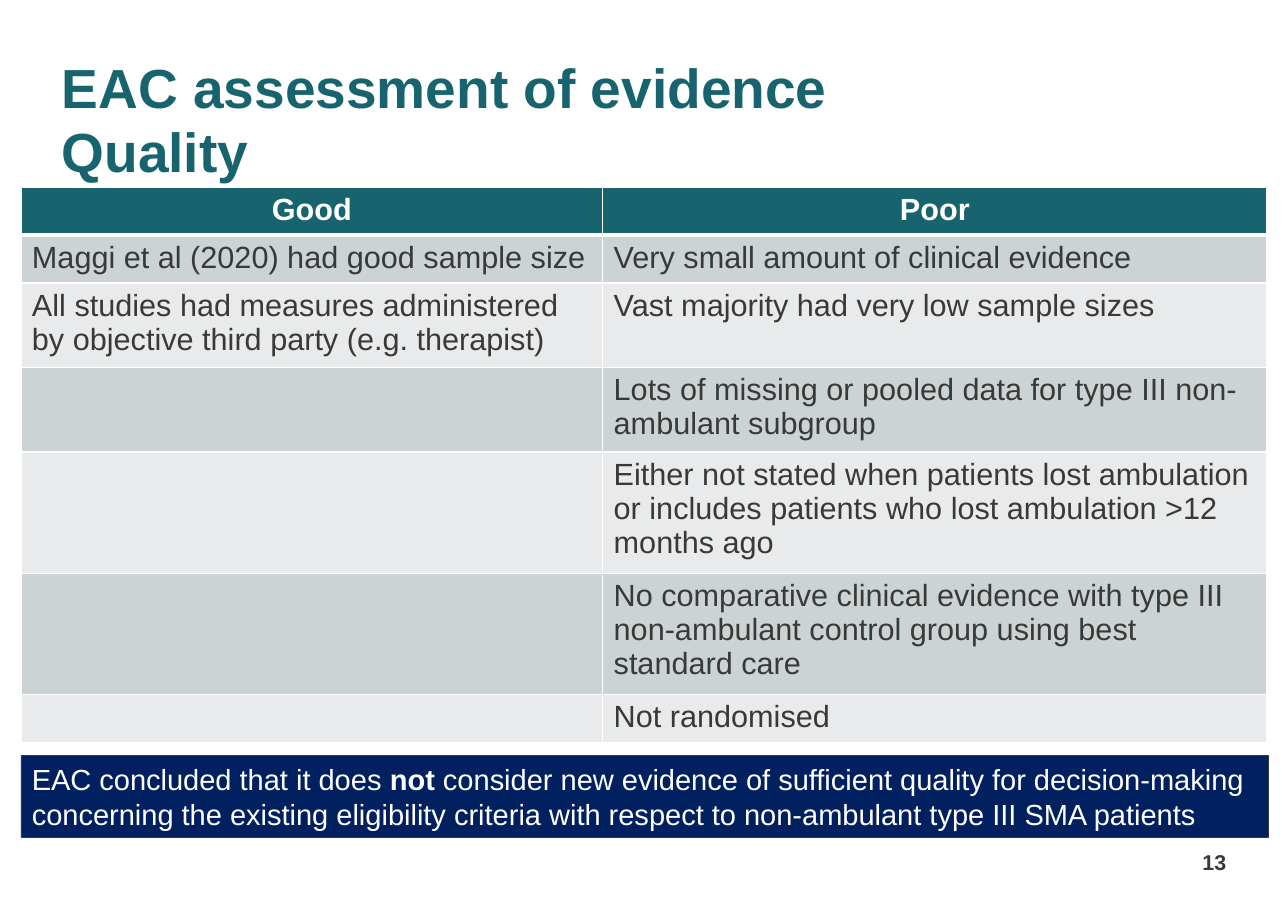
from lxml import etree
from pptx import Presentation
from pptx.dml.color import RGBColor
from pptx.enum import shapes, text
from pptx.oxml import ns
from pptx.util import Inches, Pt

TEAL, NAVY, INK, WHITE = "18646E", "002060", "393938", "FFFFFF"
BANDS = ("CCD3D5", "E8EAEB")
COLUMN_WIDTHS = (5.28, 6.03)
ROWS = (
    (0.41, "Good", "Poor"),
    (0.41, "Maggi et al (2020) had good sample size",
     "Very small amount of clinical evidence"),
    (0.72, "All studies had measures administered by objective third party (e.g. therapist)",
     "Vast majority had very low sample sizes"),
    (0.72, "", "Lots of missing or pooled data for type III non-ambulant subgroup"),
    (1.03, "", "Either not stated when patients lost ambulation or includes patients "
     "who lost ambulation >12 months ago"),
    (1.03, "", "No comparative clinical evidence with type III non-ambulant control "
     "group using best standard care"),
    (0.41, "", "Not randomised"),
)


def colour(value):
    return RGBColor.from_string(value)


def paint(part, value):
    part.fill.solid()
    part.fill.fore_color.rgb = colour(value)


def add_run(paragraph, wording, size, value, bold=False):
    run = paragraph.add_run()
    run.text = wording
    run.font.name = "Arial"
    run.font.size = Pt(size)
    run.font.bold = bold
    run.font.color.rgb = colour(value)


def clear_margins(frame):
    frame.margin_left = frame.margin_top = frame.margin_right = frame.margin_bottom = 0


def write_title(title):
    title.left, title.top = Inches(0.56), Inches(0.5)
    title.width, title.height = Inches(10.57), Inches(0.84)
    frame = title.text_frame
    clear_margins(frame)
    frame.word_wrap = True
    frame.auto_size = text.MSO_AUTO_SIZE.NONE
    frame.vertical_anchor = text.MSO_ANCHOR.TOP
    heading = frame.paragraphs[0]
    heading.alignment = text.PP_ALIGN.LEFT
    heading.line_spacing = Pt(42)
    add_run(heading, "EAC assessment of evidence", 36, TEAL, True)
    heading.add_line_break()
    add_run(heading, "Quality", 36, TEAL, True)


def draw_borders(cell, bottom):
    properties = cell._tc.get_or_add_tcPr()
    for position, (side, width) in enumerate(
            (("lnL", 1), ("lnR", 1), ("lnT", 1), ("lnB", bottom))):
        border = etree.Element(ns.qn("a:" + side), w=str(Pt(width)))
        fill = etree.SubElement(border, ns.qn("a:solidFill"))
        etree.SubElement(fill, ns.qn("a:srgbClr"), val=WHITE)
        properties.insert(position, border)


def add_evidence_table(slide):
    evidence = slide.shapes.add_table(
        len(ROWS), len(COLUMN_WIDTHS), Inches(0.19), Inches(1.7),
        Inches(sum(COLUMN_WIDTHS)), Inches(sum(row[0] for row in ROWS))).table
    for column, width in zip(evidence.columns, COLUMN_WIDTHS):
        column.width = Inches(width)
    for index, (height, *findings) in enumerate(ROWS):
        header = index == 0
        evidence.rows[index].height = Inches(height)
        for cell, finding in zip(evidence.rows[index].cells, findings):
            paint(cell, TEAL if header else BANDS[(index - 1) % 2])
            draw_borders(cell, 3 if header else 1)
            if finding:
                paragraph = cell.text_frame.paragraphs[0]
                if header:
                    paragraph.alignment = text.PP_ALIGN.CENTER
                add_run(paragraph, finding, 20, WHITE if header else INK, header)


def add_conclusion(slide):
    banner = slide.shapes.add_shape(
        shapes.MSO_SHAPE.RECTANGLE, Inches(0.19), Inches(6.86), Inches(11.32), Inches(0.74))
    banner.shadow.inherit = False
    paint(banner, NAVY)
    banner.line.color.rgb = colour(INK)
    banner.line.width = Pt(0.25)
    frame = banner.text_frame
    frame.word_wrap = True
    frame.vertical_anchor = text.MSO_ANCHOR.MIDDLE
    conclusion = frame.paragraphs[0]
    conclusion.alignment = text.PP_ALIGN.LEFT
    add_run(conclusion, "EAC concluded that it does ", 19, WHITE)
    add_run(conclusion, "not", 19, WHITE, True)
    add_run(conclusion, " consider new evidence of sufficient quality for decision-making "
            "concerning the existing eligibility criteria with respect to non-ambulant "
            "type III SMA patients", 19, WHITE)


def add_page_number(slide):
    frame = slide.shapes.add_textbox(
        Inches(10.58), Inches(7.58), Inches(0.55), Inches(0.36)).text_frame
    clear_margins(frame)
    frame.word_wrap = True
    frame.vertical_anchor = text.MSO_ANCHOR.BOTTOM
    number = frame.paragraphs[0]
    number.alignment = text.PP_ALIGN.RIGHT
    add_run(number, "13", 14, INK, True)


def main():
    deck = Presentation()
    deck.slide_width, deck.slide_height = Inches(11.69), Inches(8.27)
    slide = deck.slides.add_slide(deck.slide_layouts[5])
    write_title(slide.shapes.title)
    add_page_number(slide)
    add_conclusion(slide)
    add_evidence_table(slide)
    deck.save("out.pptx")


if __name__ == "__main__":
    main()
